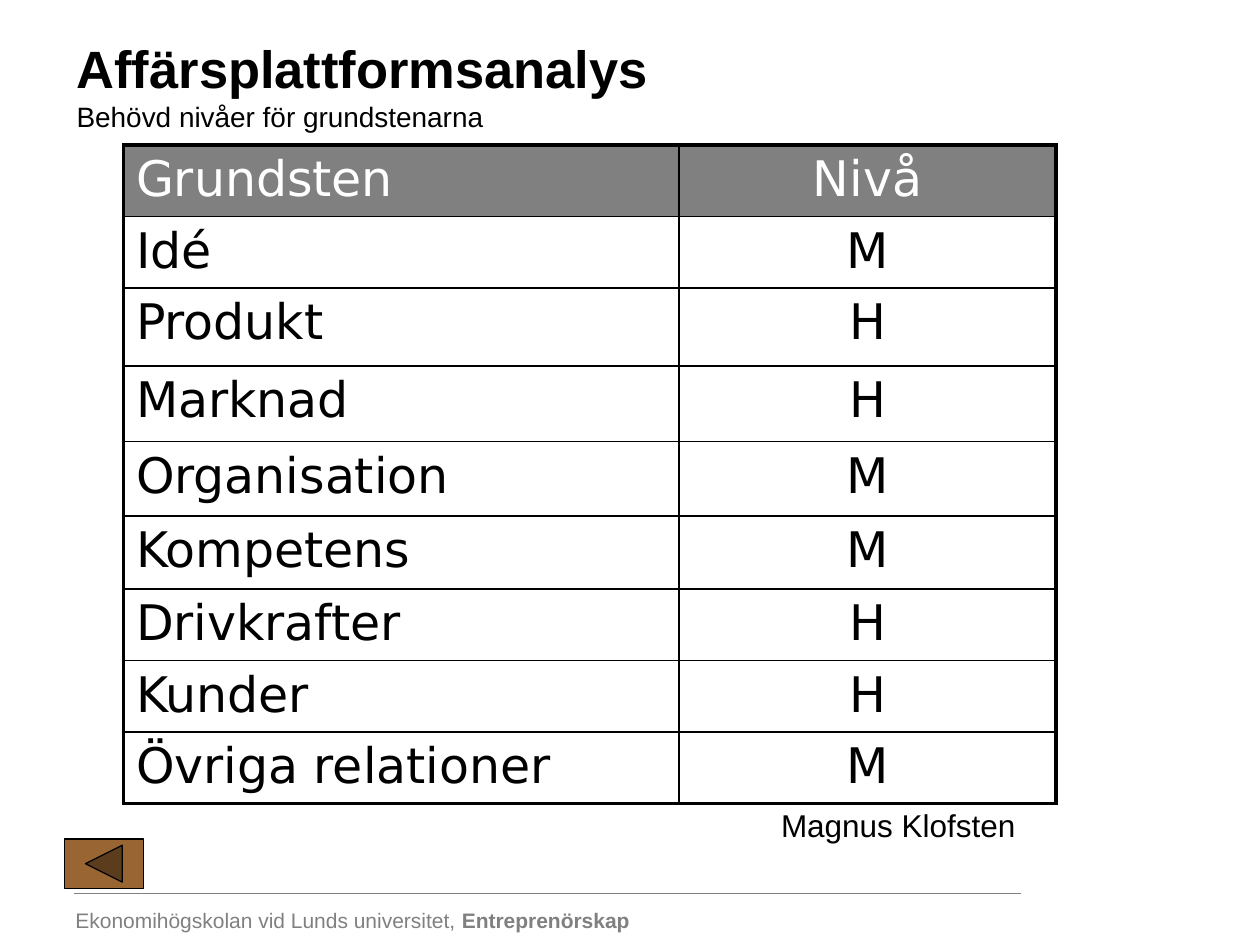
from lxml.etree import SubElement
from pptx import Presentation
from pptx.dml.color import RGBColor
from pptx.enum.shapes import MSO_CONNECTOR, MSO_SHAPE
from pptx.enum.text import MSO_ANCHOR, PP_ALIGN
from pptx.oxml.ns import qn
from pptx.util import Inches, Pt

BLACK = RGBColor(0x00, 0x00, 0x00)
WHITE = RGBColor(0xFF, 0xFF, 0xFF)
GRAY = RGBColor(0x80, 0x80, 0x80)
BROWN = RGBColor(0x99, 0x66, 0x33)

TITLE = "Affärsplattformsanalys"
SUBTITLE = "Behövd nivåer för grundstenarna"
AUTHOR = "Magnus Klofsten"
SCHOOL = "Ekonomihögskolan vid Lunds universitet, "
DEPARTMENT = "Entreprenörskap"

LEVELS = [
    ("Grundsten", "Nivå"),
    ("Idé", "M"),
    ("Produkt", "H"),
    ("Marknad", "H"),
    ("Organisation", "M"),
    ("Kompetens", "M"),
    ("Drivkrafter", "H"),
    ("Kunder", "H"),
    ("Övriga relationer", "M"),
]
COLUMN_WIDTHS = [4.41, 2.99]
ROW_HEIGHTS = [0.55, 0.55, 0.62, 0.6, 0.59, 0.58, 0.57, 0.55, 0.55]
ALIGNMENTS = [PP_ALIGN.LEFT, PP_ALIGN.CENTER]
OUTER, INNER = 2.25, 1


def add_text(slide, box, runs, color, wrap=False, anchor=MSO_ANCHOR.TOP):
    shape = slide.shapes.add_textbox(*map(Inches, box))
    frame = shape.text_frame
    frame.word_wrap = wrap
    frame.vertical_anchor = anchor
    paragraph = frame.paragraphs[0]
    for text, size, bold in runs:
        if text == "\n":
            paragraph.add_line_break()
            continue
        run = paragraph.add_run()
        run.text = text
        run.font.size = Pt(size)
        run.font.bold = bold
    paragraph.font.name = "Arial"
    for run in paragraph.runs:
        run.font.name = "Arial"
        run.font.color.rgb = color


def set_borders(cell, widths):
    properties = cell._tc.get_or_add_tcPr()
    for index, (side, width) in enumerate(widths.items()):
        line = properties.makeelement(qn(f"a:{side}"), {"w": str(Pt(width))})
        fill = SubElement(line, qn("a:solidFill"))
        SubElement(fill, qn("a:srgbClr"), val=str(BLACK))
        properties.insert(index, line)


def add_level_table(slide):
    rows, columns = len(LEVELS), len(COLUMN_WIDTHS)
    table = slide.shapes.add_table(
        rows, columns, Inches(0.98), Inches(1.15),
        Inches(sum(COLUMN_WIDTHS)), Inches(sum(ROW_HEIGHTS))).table
    for column, width in zip(table.columns, COLUMN_WIDTHS):
        column.width = Inches(width)
    for row, height in zip(table.rows, ROW_HEIGHTS):
        row.height = Inches(height)
    for r, texts in enumerate(LEVELS):
        for c, text in enumerate(texts):
            cell = table.cell(r, c)
            cell.text = text
            cell.fill.solid()
            cell.fill.fore_color.rgb = GRAY if r == 0 else WHITE
            paragraph = cell.text_frame.paragraphs[0]
            paragraph.alignment = ALIGNMENTS[c]
            paragraph.font.name = "DejaVu Sans"
            paragraph.font.size = Pt(28)
            paragraph.font.bold = False
            paragraph.font.color.rgb = WHITE if r == 0 else BLACK
            set_borders(cell, {
                "lnL": OUTER if c == 0 else INNER,
                "lnR": OUTER if c == columns - 1 else INNER,
                "lnT": OUTER if r == 0 else INNER,
                "lnB": OUTER if r == rows - 1 else INNER,
            })


def add_footer_rule(slide):
    rule = slide.shapes.add_connector(
        MSO_CONNECTOR.STRAIGHT,
        Inches(0.59), Inches(7.09), Inches(8.1), Inches(7.09))
    rule.line.color.rgb = GRAY
    rule.line.width = Pt(0.5)
    SubElement(rule._element.spPr, qn("a:effectLst"))


def add_back_button(slide):
    button = slide.shapes.add_shape(
        MSO_SHAPE.ACTION_BUTTON_BACK_OR_PREVIOUS,
        Inches(0.51), Inches(6.66), Inches(0.63), Inches(0.39))
    button.shadow.inherit = False
    button.fill.solid()
    button.fill.fore_color.rgb = BROWN
    button.line.color.rgb = BLACK
    button.line.width = Pt(0.75)


def main():
    presentation = Presentation()
    presentation.slide_width = Inches(10)
    presentation.slide_height = Inches(7.5)
    slide = presentation.slides.add_slide(presentation.slide_layouts[6])
    add_text(slide, (0.5, 7.15, 4.71, 0.3),
             [(SCHOOL, 12, False), (DEPARTMENT, 12, True)], GRAY)
    add_footer_rule(slide)
    add_text(slide, (0.51, 0.21, 9, 0.92),
             [(TITLE, 30, True), ("\n", 0, False), (SUBTITLE, 16, False)],
             BLACK, wrap=True, anchor=MSO_ANCHOR.MIDDLE)
    add_back_button(slide)
    add_level_table(slide)
    add_text(slide, (6.1, 6.35, 2.08, 0.4), [(AUTHOR, 18, False)], BLACK)
    presentation.save("out.pptx")


if __name__ == "__main__":
    main()
